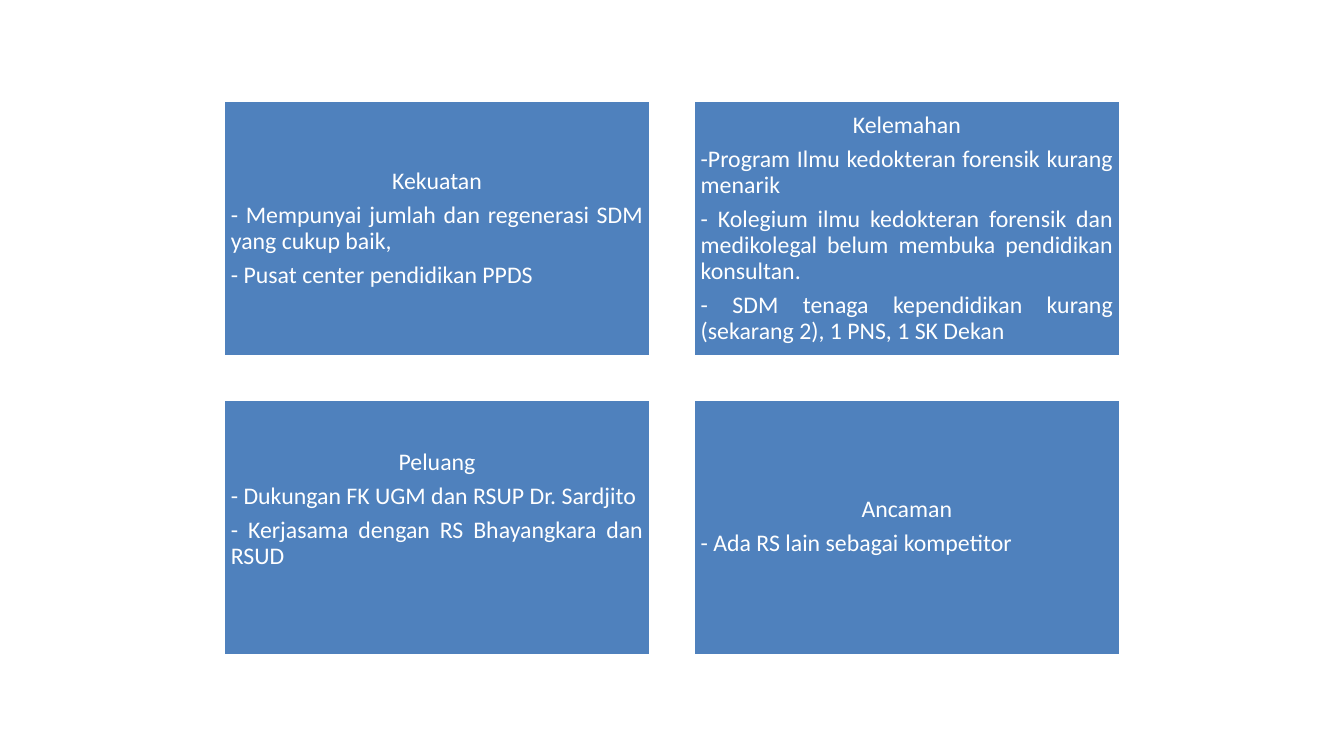
from pptx import Presentation
from pptx.dml.color import RGBColor
from pptx.enum.shapes import MSO_SHAPE
from pptx.enum.text import MSO_ANCHOR, PP_ALIGN
from pptx.util import Pt

RECTANGLE = MSO_SHAPE.RECTANGLE
MIDDLE = MSO_ANCHOR.MIDDLE
CENTER, JUSTIFY = PP_ALIGN.CENTER, PP_ALIGN.JUSTIFY

EMU_PER_PX = 9144  # 100 px to the inch
BLANK_LAYOUT = 6
COLORS = {"card": "4F81BD", "white": "FFFFFF"}

# SWOT grid
LEFT, TOP = 222, 100
CARD_WIDTH, CARD_HEIGHT = 423, 254
COLUMN_STEP, ROW_STEP = 466, 296
COLUMNS = 2
INSET = 7
LIFT = 35  # extra room below text that sits above the middle

# Heading, points, extra bottom inset
SWOT = [
    ("Kekuatan", [
        "- Mempunyai jumlah dan regenerasi SDM yang cukup baik,",
        "- Pusat center pendidikan PPDS",
    ], 0),
    ("Kelemahan", [
        "-Program Ilmu kedokteran forensik kurang menarik",
        "- Kolegium ilmu kedokteran forensik dan medikolegal belum membuka "
        "pendidikan konsultan.",
        "- SDM tenaga kependidikan kurang (sekarang 2), 1 PNS, 1 SK Dekan",
    ], 0),
    ("Peluang", [
        "- Dukungan FK UGM dan RSUP Dr. Sardjito",
        "- Kerjasama dengan RS Bhayangkara dan RSUD",
    ], LIFT),
    ("Ancaman", ["- Ada RS lain sebagai kompetitor"], 0),
]


def px(length):
    return length * EMU_PER_PX


def color(name):
    return RGBColor.from_string(COLORS[name])


def apply(target, values):
    for name, value in values.items():
        setattr(target, name, value)


class SwotSlide:
    font = {"name": "Calibri", "size": Pt(17)}
    spacing = {"line_spacing": 0.9, "space_after": Pt(6)}

    def __init__(self, presentation):
        layout = presentation.slide_layouts[BLANK_LAYOUT]
        self.slide = presentation.slides.add_slide(layout)

    def card(self, left, top, heading, points, lift):
        card = self.slide.shapes.add_shape(
            RECTANGLE, px(left), px(top), px(CARD_WIDTH), px(CARD_HEIGHT))
        card.shadow.inherit = False
        card.fill.solid()
        card.fill.fore_color.rgb = color("card")
        card.line.color.rgb = color("white")
        card.line.width = Pt(2)

        frame = card.text_frame
        apply(frame, {
            "word_wrap": True, "vertical_anchor": MIDDLE,
            "margin_left": px(INSET), "margin_right": px(INSET),
            "margin_top": px(INSET), "margin_bottom": px(INSET + lift),
        })
        self.paragraph(frame.paragraphs[0], heading, CENTER)
        for point in points:
            self.paragraph(frame.add_paragraph(), point, JUSTIFY)

    def paragraph(self, paragraph, text, alignment):
        apply(paragraph, {"alignment": alignment, **self.spacing})
        run = paragraph.add_run()
        run.text = text
        apply(run.font, self.font)
        run.font.color.rgb = color("white")


def main():
    presentation = Presentation()
    presentation.slide_width = px(1333)
    presentation.slide_height = px(750)
    swot = SwotSlide(presentation)

    # Four cards, row by row
    for index, (heading, points, lift) in enumerate(SWOT):
        row, column = divmod(index, COLUMNS)
        swot.card(LEFT + column * COLUMN_STEP, TOP + row * ROW_STEP,
                  heading, points, lift)

    presentation.save("out.pptx")


if __name__ == "__main__":
    main()
